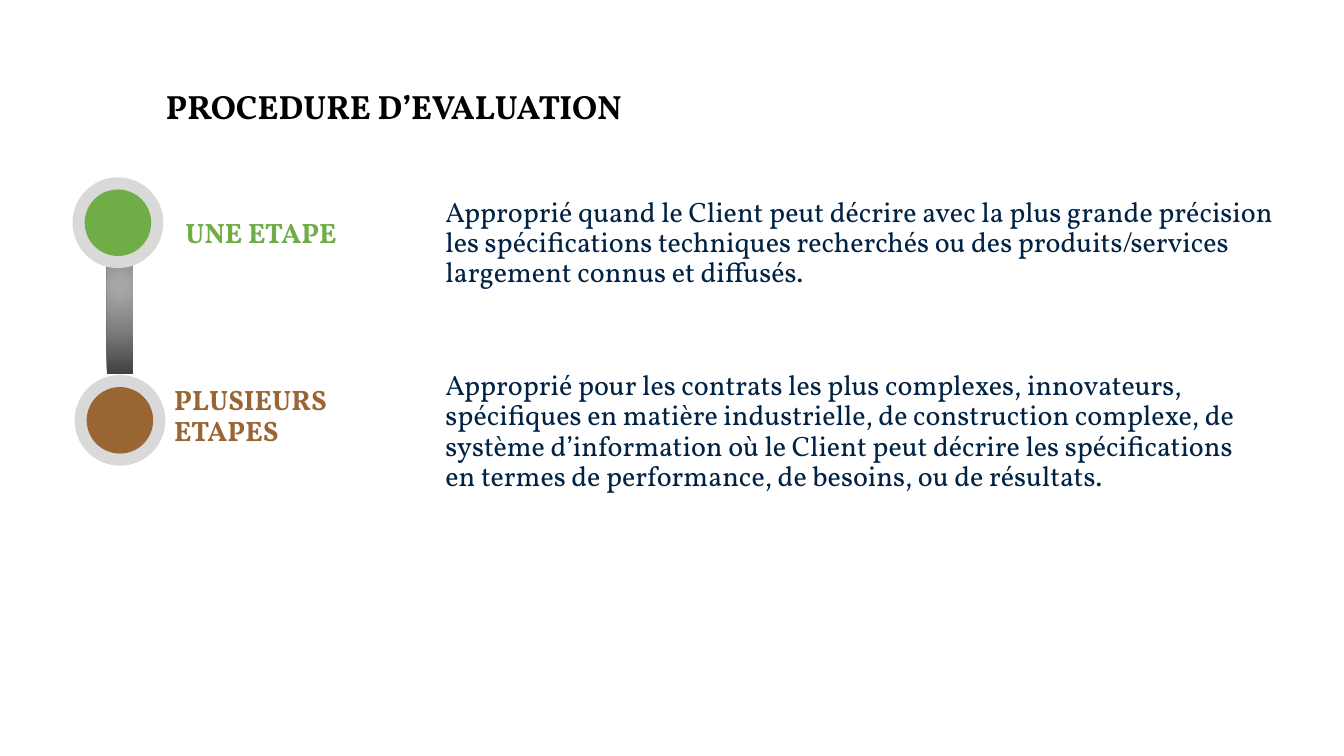
from lxml.etree import SubElement
from pptx import Presentation
from pptx.dml.color import RGBColor
from pptx.enum.shapes import MSO_SHAPE as Shape
from pptx.enum.text import MSO_ANCHOR as Anchor, MSO_AUTO_SIZE as AutoSize, PP_ALIGN as Align
from pptx.oxml.ns import qn
from pptx.util import Pt

PX = 9144
FONT = "Vollkorn"
WHITE = RGBColor(0xFF, 0xFF, 0xFF)
BLACK = RGBColor(0x00, 0x00, 0x00)
NAVY = RGBColor(0x00, 0x23, 0x45)
GREEN = RGBColor(0x70, 0xAD, 0x47)
BROWN = RGBColor(0x99, 0x66, 0x33)
RING_GREY = RGBColor(0xD9, 0xD9, 0xD9)
LIGHT_GREY = RGBColor(0xA6, 0xA6, 0xA6)
MID_GREY = RGBColor(0x80, 0x80, 0x80)
DARK_GREY = RGBColor(0x40, 0x40, 0x40)

RING_SIZE = 90
RING_WIDTH = 12

STEPS = [
    {
        "badge": (72, 176),
        "color": GREEN,
        "label": ["UNE ETAPE"],
        "label_box": (102, 37, 303, 40),
        "text": "Approprié quand le Client peut décrire avec la plus grande précision "
                "les spécifications techniques recherchés ou des produits/services "
                "largement connus et diffusés.",
        "text_box": (360, 15, 864, 101),
    },
    {
        "badge": (74, 372),
        "color": BROWN,
        "label": ["PLUSIEURS", "ETAPES"],
        "label_box": (89, 6, 234, 71),
        "text": "Approprié pour les contrats les plus complexes, innovateurs, "
                "spécifiques en matière industrielle, de construction complexe, de "
                "système d’information où le Client peut décrire les spécifications "
                "en termes de performance, de besoins, ou de résultats.",
        "text_box": (358, -9, 833, 131),
    },
]


def to_emu(box):
    return [length * PX for length in box]


def add_filled(shapes, kind, box, color):
    shape = shapes.add_shape(kind, *to_emu(box))
    shape.shadow.inherit = False
    shape.fill.solid()
    shape.fill.fore_color.rgb = color
    shape.line.fill.background()
    return shape


def write_lines(shape, lines, size, color, bold, anchor, align=Align.LEFT, spacing=None):
    frame = shape.text_frame
    frame.word_wrap = True
    frame.auto_size = AutoSize.SHAPE_TO_FIT_TEXT
    frame.vertical_anchor = anchor
    frame.text = "\n".join(lines)
    for paragraph in frame.paragraphs:
        paragraph.alignment = align
        paragraph.line_spacing = spacing
        paragraph.font.name = FONT
        paragraph.font.size = Pt(size)
        paragraph.font.bold = bold
        paragraph.font.color.rgb = color


def add_title(slide, box):
    title = add_filled(slide.shapes, Shape.RECTANGLE, box, WHITE)
    write_lines(title, ["PROCEDURE D’EVALUATION"], 24, BLACK, True, Anchor.TOP, Align.CENTER)


def add_link_bar(slide, box):
    bar = add_filled(slide.shapes, Shape.RECTANGLE, box, MID_GREY)
    bar.fill.gradient()
    gradient = bar.fill._xPr.find(qn("a:gradFill"))
    for child in list(gradient):
        gradient.remove(child)
    stops = SubElement(gradient, qn("a:gsLst"))
    for position, color in ((7, LIGHT_GREY), (48, MID_GREY), (100, DARK_GREY)):
        stop = SubElement(stops, qn("a:gs"), pos=str(position * 1000))
        SubElement(stop, qn("a:srgbClr"), val=str(color))
    circle = SubElement(gradient, qn("a:path"), path="circle")
    SubElement(circle, qn("a:fillToRect"), l="50000", t="50000", r="50000", b="50000")


def add_badge(slide, left, top, color):
    group = slide.shapes.add_group_shape()
    for inset, fill in ((0, RING_GREY), (RING_WIDTH, color)):
        size = RING_SIZE - 2 * inset
        add_filled(group.shapes, Shape.OVAL, (left + inset, top + inset, size, size), fill)


def add_step(slide, step):
    left, top = step["badge"]

    def add_text(box, lines, color, bold):
        x, y, width, height = box
        textbox = slide.shapes.add_textbox(*to_emu((left + x, top + y, width, height)))
        write_lines(textbox, lines, 20, color, bold, Anchor.MIDDLE, spacing=0.9)

    add_text(step["text_box"], [step["text"]], NAVY, False)
    add_text(step["label_box"], step["label"], step["color"], True)
    add_badge(slide, left, top, step["color"])


def main():
    presentation = Presentation()
    presentation.slide_width, presentation.slide_height = to_emu((1333, 750))
    slide = presentation.slides.add_slide(presentation.slide_layouts[6])
    add_title(slide, (86, 80, 609, 50))
    add_link_bar(slide, (106, 197, 26, 174))
    for step in STEPS:
        add_step(slide, step)
    presentation.save("out.pptx")


if __name__ == "__main__":
    main()
